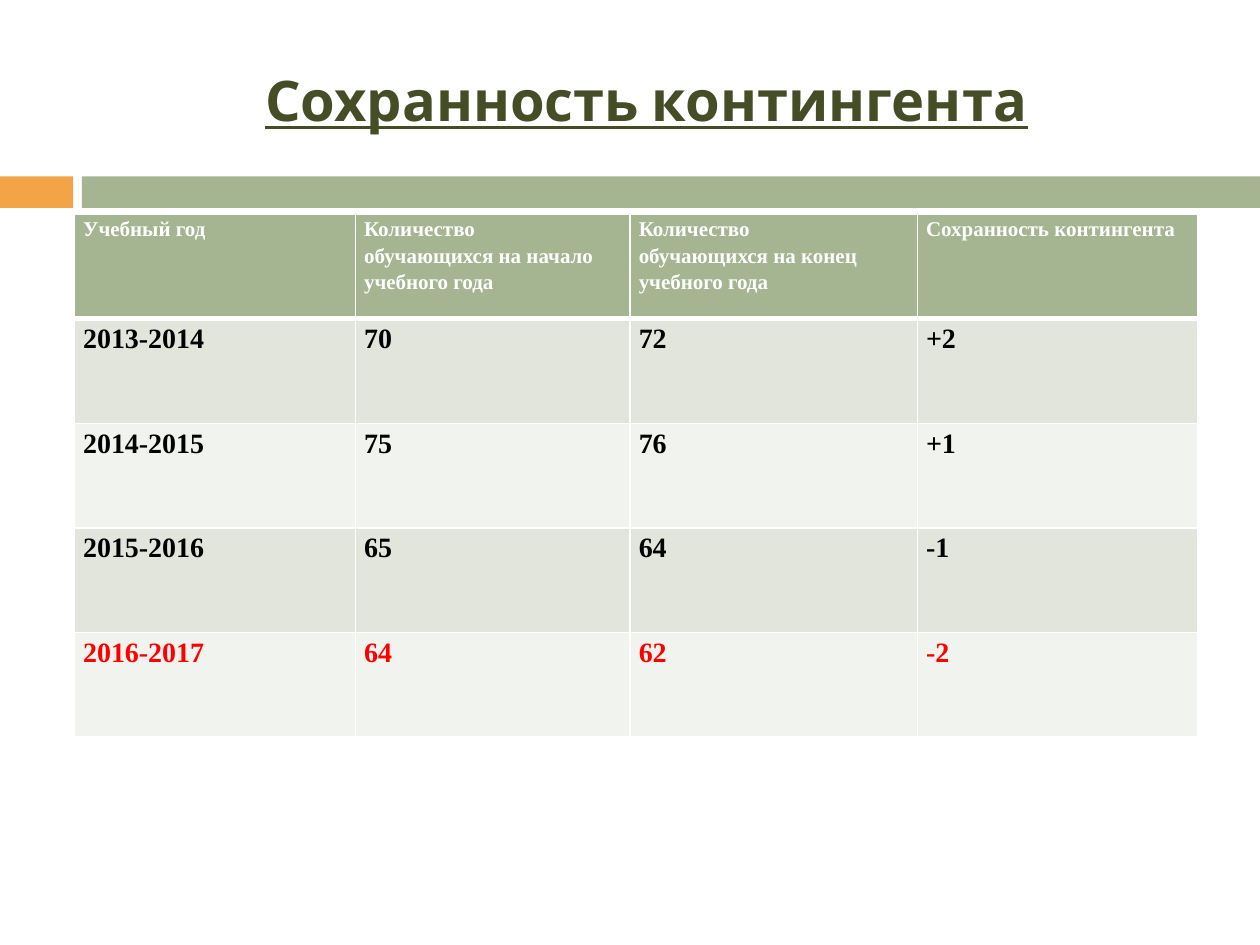
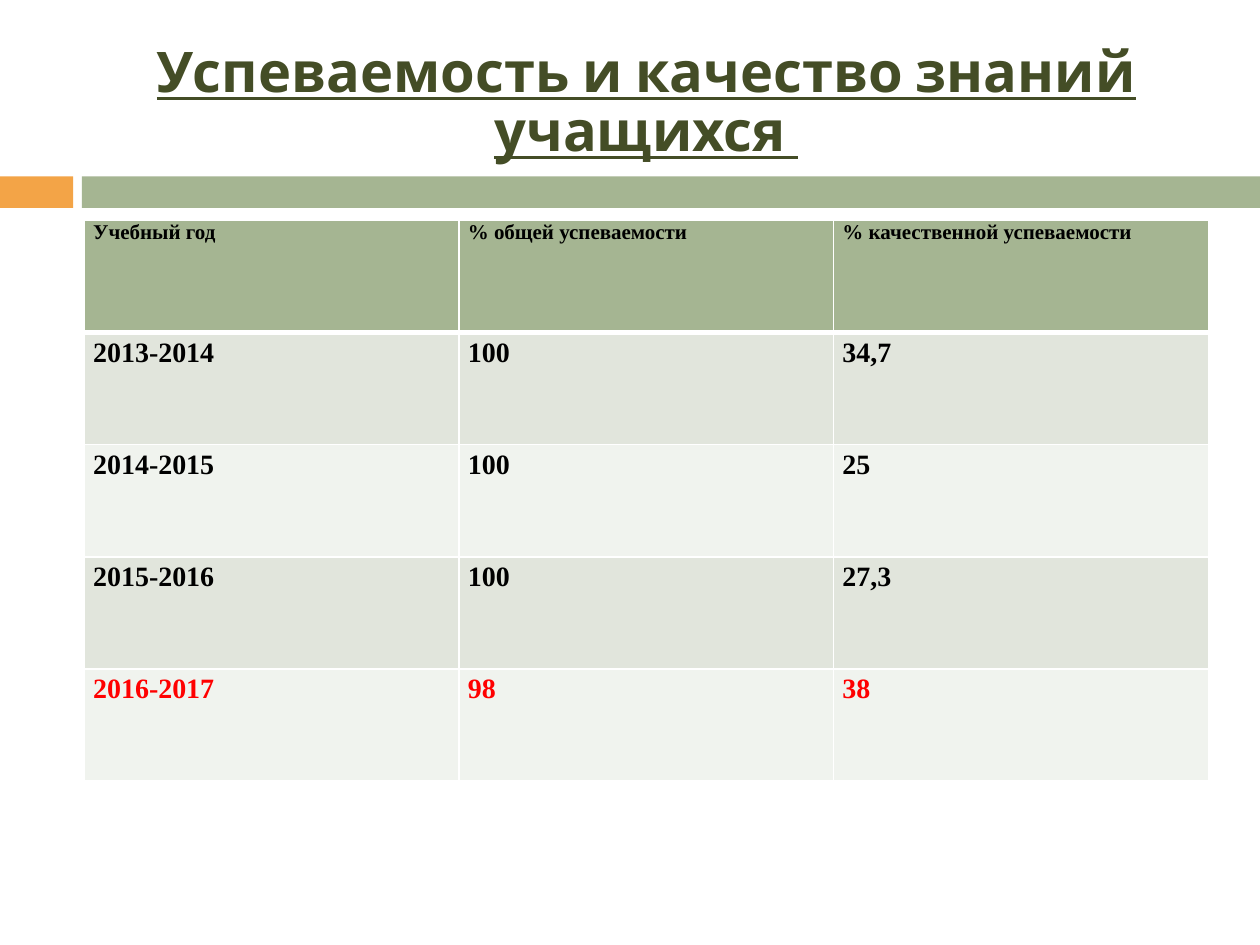
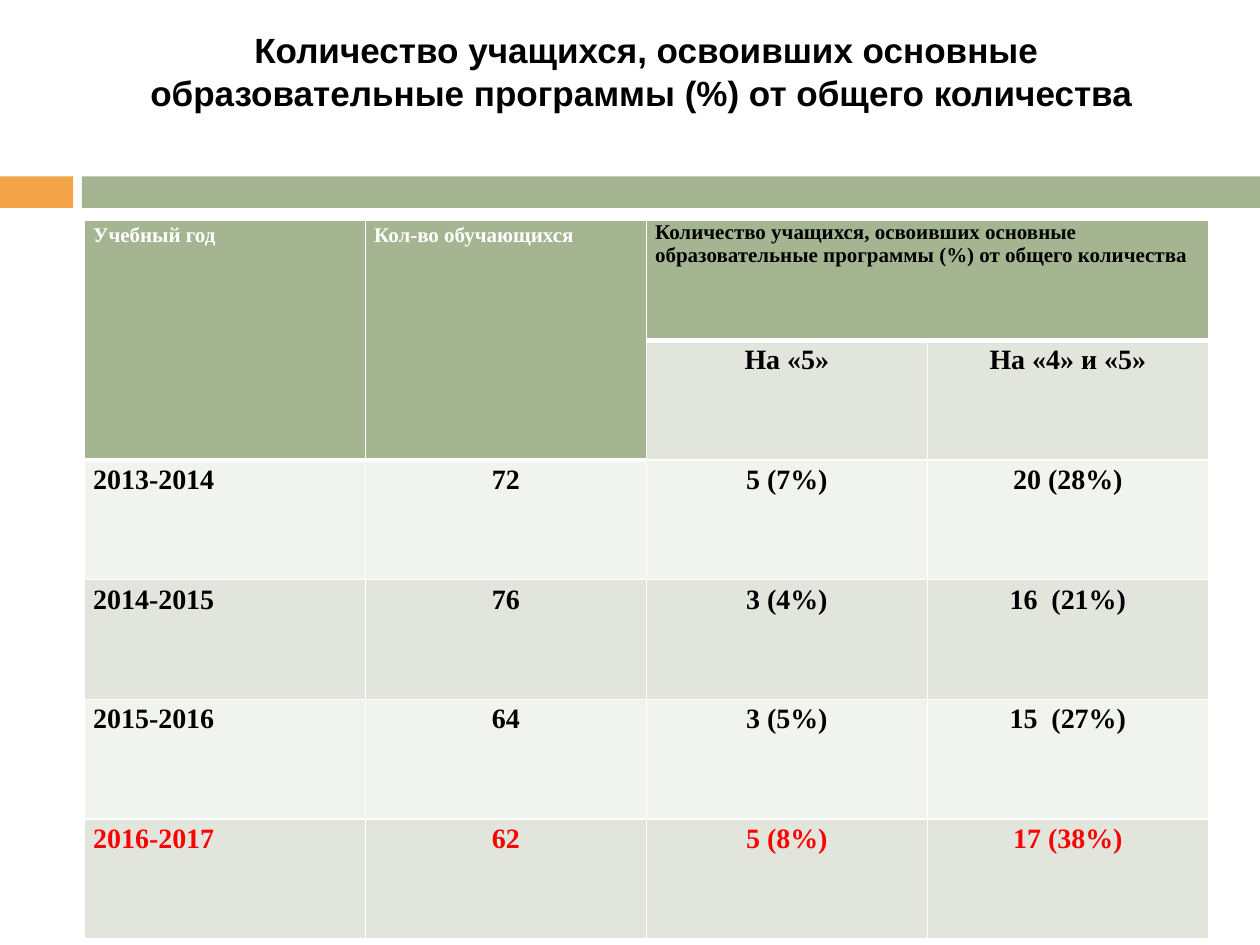
"""Build three slides of school results, each a title above a table."""
from lxml.etree import SubElement
from pptx import Presentation
from pptx.dml.color import RGBColor
from pptx.enum.shapes import MSO_SHAPE as Shape
from pptx.enum.text import MSO_ANCHOR as Anchor, MSO_AUTO_SIZE as AutoSize, PP_ALIGN as Align
from pptx.oxml.ns import qn
from pptx.util import Inches, Pt

COLORS = {
    "orange": "F3A447",
    "green": "A5B592",
    "olive": "444D26",
    "band_dark": "E1E5DC",
    "band_light": "F0F3EE",
    "white": "FFFFFF",
    "black": "000000",
    "red": "FF0000",
}
TABLE_WIDTH = 8.92
TITLE_ONLY = 5


def rgb(name):
    """Return the named colour."""
    return RGBColor.from_string(COLORS[name])


def write(frame, text, *, size, font="Times New Roman", color="black", align=Align.LEFT,
          spacing=1.0, underline=False):
    """Fill a text frame with one bold paragraph per line of text."""
    frame.text = text
    for paragraph in frame.paragraphs:
        paragraph.alignment = align
        paragraph.line_spacing = spacing
        for run in paragraph.runs:
            run.font.name = font
            run.font.size = Pt(size)
            run.font.bold = True
            run.font.underline = underline
            run.font.color.rgb = rgb(color)


def add_band(slide, left, width, color):
    """Draw one part of the strip under the title."""
    band = slide.shapes.add_shape(Shape.RECTANGLE, Inches(left), Inches(1.4),
                                  Inches(width), Inches(0.25))
    band.shadow.inherit = False
    band.fill.solid()
    band.fill.fore_color.rgb = rgb(color)
    band.line.fill.background()


def add_title(slide, text, *, top=0.25, inset=0.05, anchor=Anchor.MIDDLE, **text_format):
    """Place and format the title, whose box ends just above the strip."""
    title = slide.shapes.title
    title.left, title.top = Inches(0.67), Inches(top)
    title.width, title.height = Inches(TABLE_WIDTH), Inches(1.33 - top)
    frame = title.text_frame
    frame.word_wrap = True
    frame.auto_size = AutoSize.NONE
    frame.vertical_anchor = anchor
    frame.margin_top = Inches(inset)
    style = {"size": 32, "font": "Cabin", "color": "olive", "underline": True}
    write(frame, text, align=Align.CENTER, **(style | text_format))


def start_slide(deck, title, **title_format):
    """Add a slide with the shared strip and a title."""
    slide = deck.slides.add_slide(deck.slide_layouts[TITLE_ONLY])
    add_band(slide, 0, 0.58, "orange")
    add_band(slide, 0.65, 9.35, "green")
    add_title(slide, title, **title_format)
    return slide


def set_borders(cell, top, bottom):
    """Give a cell white borders, with top and bottom widths in points."""
    properties = cell._tc.get_or_add_tcPr()
    widths = {"lnL": 1, "lnR": 1, "lnT": top, "lnB": bottom}
    for position, (side, width) in enumerate(widths.items()):
        border = SubElement(properties, qn(f"a:{side}"), w=str(Pt(width)))
        fill = SubElement(border, qn("a:solidFill"))
        SubElement(fill, qn("a:srgbClr"), val=COLORS["white"])
        properties.insert(position, border)


def add_results(slide, rows, *, left, top, row_height, widths, header_depths,
                dark_headers=(), value_align=Align.LEFT):
    """Add a results table whose last year is set in red."""
    table = slide.shapes.add_table(len(rows), len(widths), Inches(left), Inches(top),
                                   Inches(sum(widths)), Inches(row_height * len(rows))).table
    table.first_row = table.horz_banding = False
    for column, width in zip(table.columns, widths):
        column.width = Inches(width)
    for row_index, texts in enumerate(rows):
        table.rows[row_index].height = Inches(row_height)
        for column_index, text in enumerate(texts):
            cell = table.cell(row_index, column_index)
            depth = header_depths[column_index]
            is_header = row_index < depth
            banding = "band_dark" if row_index % 2 else "band_light"
            cell.margin_left = cell.margin_right = Inches(0.07)
            cell.margin_top = cell.margin_bottom = 0
            cell.fill.solid()
            cell.fill.fore_color.rgb = rgb("green" if is_header else banding)
            set_borders(cell, 3 if row_index == depth else 1, 3 if is_header else 1)
            if not text:
                continue
            if is_header:
                dark = column_index in dark_headers
                write(cell.text_frame, text, size=12, color="black" if dark else "white",
                      spacing=1.0 if dark else 1.15)
            else:
                write(cell.text_frame, text, size=16, spacing=1.15,
                      color="red" if row_index == len(rows) - 1 else "black",
                      align=value_align if column_index else Align.LEFT)
    return table


def add_retention(deck):
    """Add the slide on keeping the number of pupils."""
    slide = start_slide(deck, "Сохранность контингента")
    rows = [
        ("Учебный год", "Количество\nобучающихся на начало учебного года",
         "Количество\nобучающихся на конец учебного года", "Сохранность контингента"),
        ("2013-2014", "70", "72", "+2"),
        ("2014-2015", "75", "76", "+1"),
        ("2015-2016", "65", "64", "-1"),
        ("2016-2017", "64", "62", "-2"),
    ]
    add_results(slide, rows, left=0.59, top=1.7, row_height=0.83,
                widths=(2.23, 2.18, 2.28, 2.23), header_depths=(1, 1, 1, 1))


def add_progress(deck):
    """Add the slide on progress and quality of knowledge."""
    slide = start_slide(deck, "Успеваемость и качество знаний учащихся ",
                        inset=0.13, spacing=0.88)
    rows = [
        ("Учебный год", "% общей успеваемости", "% качественной успеваемости"),
        ("2013-2014", "100", "34,7"),
        ("2014-2015", "100", "25"),
        ("2015-2016", "100", "27,3"),
        ("2016-2017", "98", "38"),
    ]
    add_results(slide, rows, left=0.67, top=1.75, row_height=0.89,
                widths=[TABLE_WIDTH / 3] * 3, header_depths=(1, 1, 1), dark_headers=(0, 1, 2))


def add_programmes(deck):
    """Add the slide on pupils who mastered the main programmes."""
    heading = "Количество учащихся, освоивших основные образовательные программы (%) от общего количества"
    slide = start_slide(deck, heading + " ", top=0.05, inset=0.16, anchor=Anchor.TOP, size=20,
                        font="Arial", color="black", underline=False, spacing=1.04)
    rows = [
        ("Учебный год", "Кол-во обучающихся", heading, ""),
        ("", "", "На «5»", "На «4» и «5»"),
        ("2013-2014", "72", "5 (7%)", "20 (28%)"),
        ("2014-2015", "76", "3 (4%)", "16  (21%)"),
        ("2015-2016", "64", "3 (5%)", "15  (27%)"),
        ("2016-2017", "62", "5 (8%)", "17 (38%)"),
    ]
    table = add_results(slide, rows, left=0.67, top=1.75, row_height=0.95,
                        widths=[TABLE_WIDTH / 4] * 4, header_depths=(2, 2, 1, 1),
                        dark_headers=(2,), value_align=Align.CENTER)
    for column_index in (0, 1):
        table.cell(0, column_index).merge(table.cell(1, column_index))
    table.cell(0, 2).merge(table.cell(0, 3))


def main():
    """Build and save the deck."""
    deck = Presentation()
    deck.slide_width, deck.slide_height = Inches(10), Inches(7.5)
    add_retention(deck)
    add_progress(deck)
    add_programmes(deck)
    deck.save("out.pptx")


if __name__ == "__main__":
    main()
